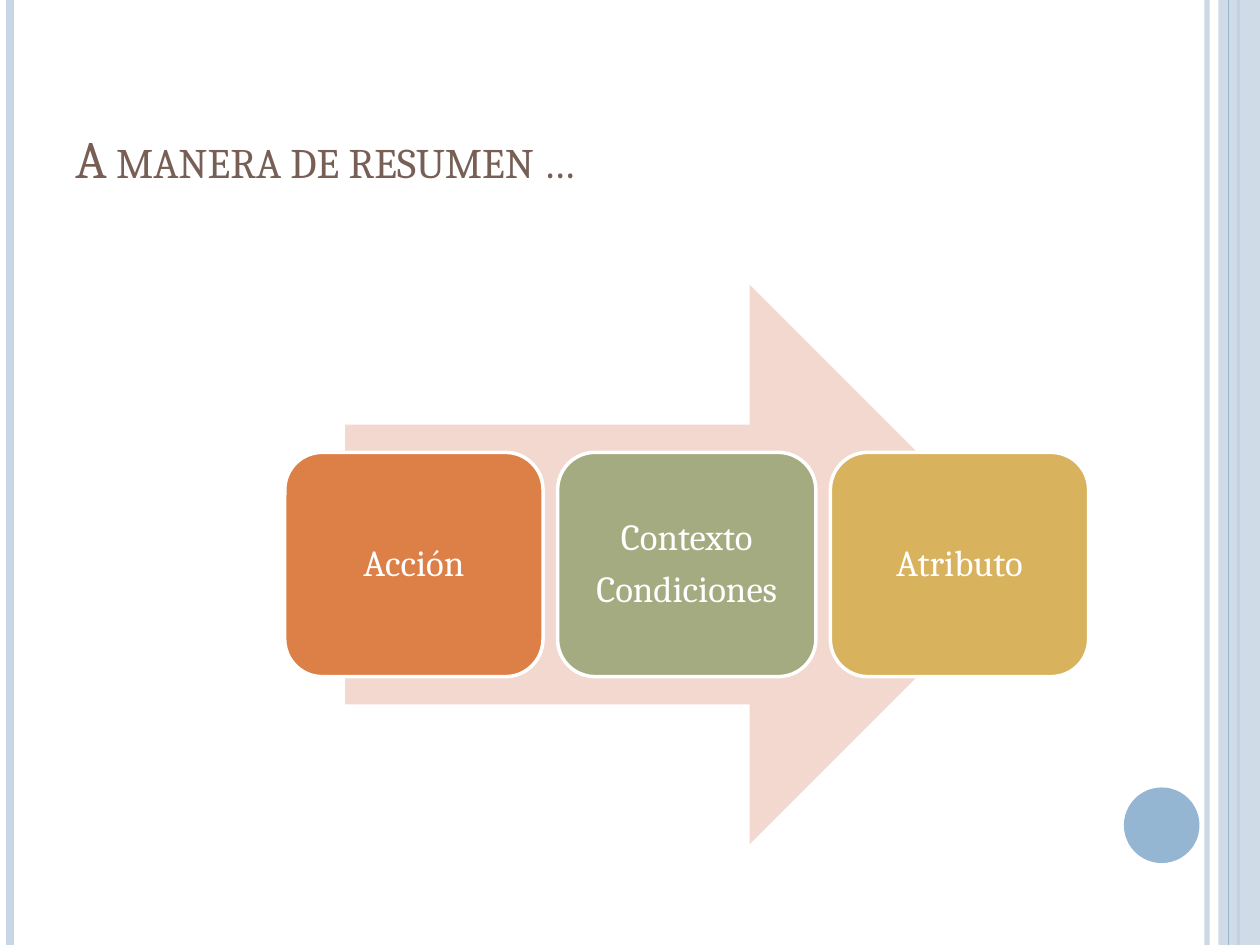
from typing import NamedTuple

from lxml import etree
from pptx import Presentation
from pptx.dml.color import RGBColor
from pptx.enum.shapes import MSO_CONNECTOR, MSO_SHAPE
from pptx.enum.text import MSO_ANCHOR, PP_ALIGN
from pptx.oxml.ns import qn
from pptx.util import Inches, Pt

STRAIGHT = MSO_CONNECTOR.STRAIGHT
RECT = MSO_SHAPE.RECTANGLE
OVAL = MSO_SHAPE.OVAL
ARROW = MSO_SHAPE.RIGHT_ARROW
ROUNDED = MSO_SHAPE.ROUNDED_RECTANGLE
MIDDLE, BOTTOM = MSO_ANCHOR.MIDDLE, MSO_ANCHOR.BOTTOM
CENTER = PP_ALIGN.CENTER

FONT = "Cambria"
WHITE, BLUE, PALE_BLUE = "FFFFFF", "94B6D2", "C8D7E5"
SLIDE_W, SLIDE_H = 10, 7.5
STEP_LEFT, STEP_TOP, STEP_PITCH = 2.26, 3.59, 2.165
STEP_W, STEP_H = 2.05, 1.78


class Stripe(NamedTuple):
    x: float
    color: str
    width: float
    opacity: int = 100


class Step(NamedTuple):
    lines: tuple[str, ...]
    color: str


LOWER_STRIPES = (
    Stripe(9.58, PALE_BLUE, 3, 93),
    Stripe(0.08, PALE_BLUE, 4.5),
    Stripe(9.83, BLUE, 1.5),
)
UPPER_STRIPE = Stripe(9.75, BLUE, 0.75)
STEPS = (
    Step(("Acción",), "DD8047"),
    Step(("Contexto", "Condiciones"), "A5AB81"),
    Step(("Atributo",), "D8B25C"),
)


def rgb(value: str) -> RGBColor:
    return RGBColor.from_string(value)


def set_opacity(element, percent: int) -> None:
    """Make the first solid colour inside element partly transparent."""
    color = next(element.iter(qn("a:srgbClr")))
    etree.SubElement(color, qn("a:alpha"), val=str(percent * 1000))


def add_stripe(s, stripe: Stripe) -> None:
    x = Inches(stripe.x)
    line = s.shapes.add_connector(STRAIGHT, x, 0, x, Inches(SLIDE_H))
    line.line.color.rgb = rgb(stripe.color)
    line.line.width = Pt(stripe.width)
    sp_pr = line._element.spPr
    if stripe.opacity < 100:
        set_opacity(sp_pr, stripe.opacity)
    etree.SubElement(sp_pr, qn("a:effectLst"))


def add_block(s, kind, left: float, top: float, width: float, height: float,
              color: str):
    """Add a filled shape without outline or shadow."""
    sp = s.shapes.add_shape(kind, Inches(left), Inches(top),
                            Inches(width), Inches(height))
    sp.shadow.inherit = False
    sp.fill.solid()
    sp.fill.fore_color.rgb = rgb(color)
    sp.line.fill.background()
    return sp


def add_run(p, text: str, size: float, color: str):
    r = p.add_run()
    r.text = text
    r.font.name = FONT
    r.font.size = Pt(size)
    r.font.color.rgb = rgb(color)
    return r


def add_title(s, text: str) -> None:
    box = s.shapes.add_textbox(Inches(0.5), Inches(0.3),
                               Inches(8.17), Inches(1.25))
    tf = box.text_frame
    tf.word_wrap = True
    tf.vertical_anchor = BOTTOM
    r = add_run(tf.paragraphs[0], text, 30, "775F55")
    r.font._element.set("cap", "small")


def add_step(s, index: int, step: Step) -> None:
    sp = add_block(s, ROUNDED, STEP_LEFT + index * STEP_PITCH, STEP_TOP,
                   STEP_W, STEP_H, step.color)
    sp.line.color.rgb = rgb(WHITE)
    sp.line.width = Pt(2)
    tf = sp.text_frame
    tf.word_wrap = True
    tf.vertical_anchor = MIDDLE
    tf.margin_left = tf.margin_right = Inches(0.09)
    tf.margin_top = tf.margin_bottom = Inches(0.09)
    for i, text in enumerate(step.lines):
        p = tf.add_paragraph() if i else tf.paragraphs[0]
        p.alignment = CENTER
        p.line_spacing = 0.9
        p.space_after = Pt(7.35)
        add_run(p, text, 21, WHITE)


def add_frame(s) -> None:
    """Draw the side stripes, right band and corner disc."""
    for stripe in LOWER_STRIPES:
        add_stripe(s, stripe)
    band = add_block(s, RECT, 9.67, 0, 0.33, SLIDE_H, PALE_BLUE)
    set_opacity(band._element.spPr, 87)
    add_stripe(s, UPPER_STRIPE)
    add_block(s, OVAL, 8.92, 6.25, 0.6, 0.6, BLUE)


def main() -> None:
    prs = Presentation()
    prs.slide_width, prs.slide_height = Inches(SLIDE_W), Inches(SLIDE_H)
    s = prs.slides.add_slide(prs.slide_layouts[6])
    add_frame(s)
    add_title(s, "A manera de resumen …")
    add_block(s, ARROW, 2.74, 2.26, 5.43, 4.44, "F2D8CF")
    for index, step in enumerate(STEPS):
        add_step(s, index, step)
    prs.save("out.pptx")


if __name__ == "__main__":
    main()
